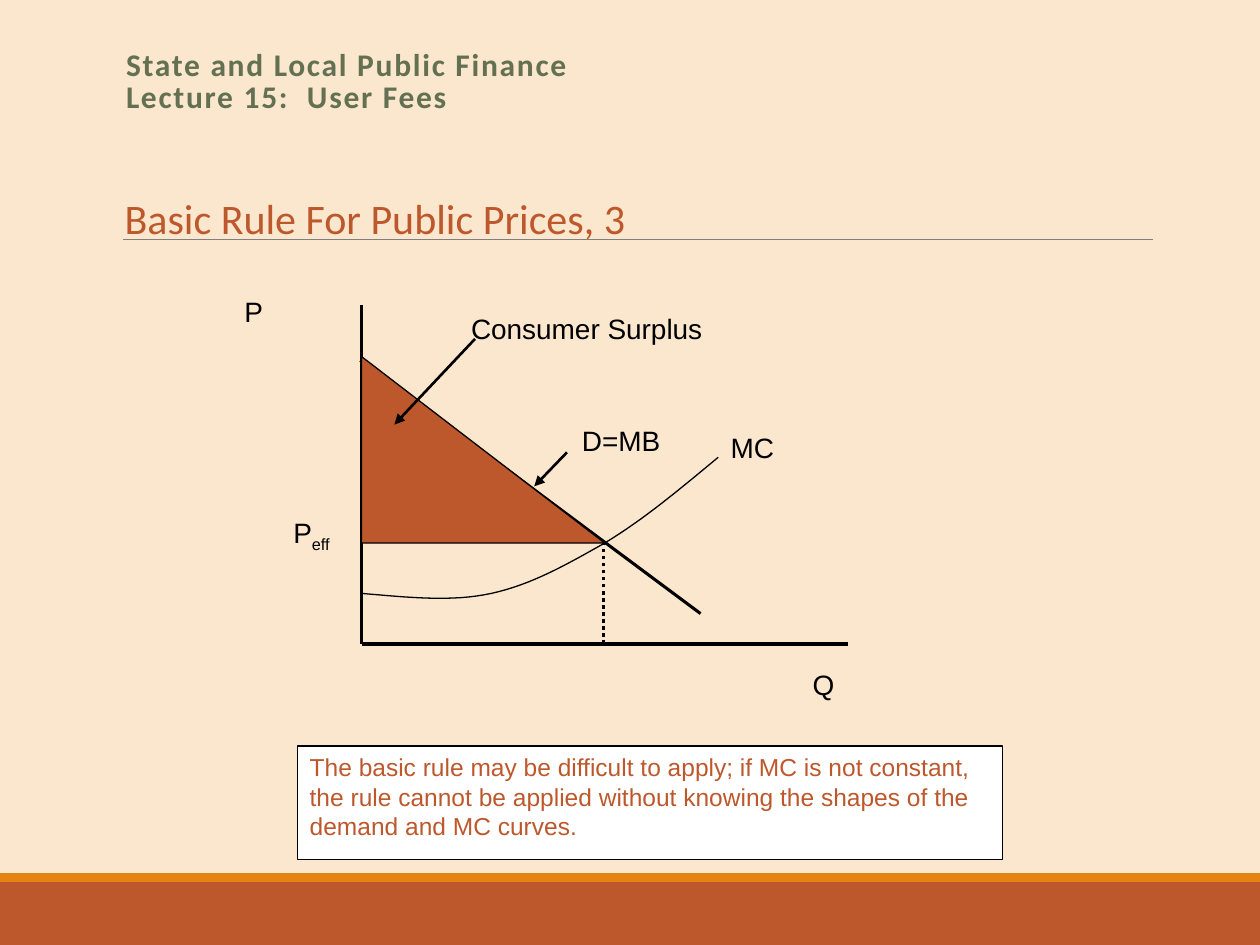
from lxml import etree
from pptx import Presentation
from pptx.dml.color import RGBColor
from pptx.enum.dml import MSO_LINE
from pptx.enum.shapes import MSO_CONNECTOR, MSO_SHAPE
from pptx.enum.text import MSO_ANCHOR, MSO_AUTO_SIZE, PP_ALIGN
from pptx.oxml.ns import qn
from pptx.util import Pt

SCALE = 9144  # EMU per px, 100 px to the inch
TITLE_ONLY = 5

CREAM = RGBColor(0xFB, 0xE6, 0xCE)
RUST = RGBColor(0xBD, 0x58, 0x2C)
ORANGE = RGBColor(0xE4, 0x83, 0x12)
GREEN = RGBColor(0x63, 0x70, 0x52)
GRAY = RGBColor(0x80, 0x80, 0x80)
BLACK = RGBColor(0, 0, 0)
WHITE = RGBColor(0xFF, 0xFF, 0xFF)

RECTANGLE = MSO_SHAPE.RECTANGLE
RIGHT_TRIANGLE = MSO_SHAPE.RIGHT_TRIANGLE
STRAIGHT = MSO_CONNECTOR.STRAIGHT
DOTTED = MSO_LINE.ROUND_DOT
TOP, MIDDLE = MSO_ANCHOR.TOP, MSO_ANCHOR.MIDDLE
LEFT = PP_ALIGN.LEFT
GROW = MSO_AUTO_SIZE.SHAPE_TO_FIT_TEXT
FIXED = MSO_AUTO_SIZE.NONE

# Marginal cost: start point, then two controls and an end per segment
MC_START = (287, 471)
MC_SEGMENTS = [
    ((323, 474), (358, 478), (390, 471)),
    ((422, 464), (450, 448), (480, 431)),
    ((510, 413), (540, 388), (570, 363)),
]
CURVE_STEPS = 16


def px(*lengths):
    return [round(length * SCALE) for length in lengths]


def write_text(shape, text, size=16, font="Arial", color=BLACK, bold=False,
               spacing=0, line_spacing=None, subscript="", anchor=TOP,
               wrap=True, auto_size=FIXED):
    frame = shape.text_frame
    frame.word_wrap, frame.auto_size = wrap, auto_size
    frame.vertical_anchor = anchor
    paragraph = frame.paragraphs[0]
    paragraph.alignment = LEFT
    if line_spacing:
        paragraph.line_spacing = line_spacing
    for index, line in enumerate(text.split("\n")):
        if index:
            paragraph.add_line_break()
        paragraph.add_run().text = line
    if subscript:
        run = paragraph.add_run()
        run.text = subscript
        run.font._element.set("baseline", "-25000")
    for run in paragraph.runs:
        run.font.size, run.font.name = Pt(size), font
        run.font.bold, run.font.color.rgb = bold, color
        if spacing:
            run.font._element.set("spc", str(spacing * 100))


def add_label(slide, box, text, **text_format):
    label = slide.shapes.add_textbox(*px(*box))
    write_text(label, text, **text_format)


def add_block(slide, kind, box, fill, outline=None):
    shape = slide.shapes.add_shape(kind, *px(*box))
    shape.shadow.inherit = False
    shape.fill.solid()
    shape.fill.fore_color.rgb = fill
    if outline is None:
        shape.line.fill.background()
    else:
        shape.line.color.rgb = outline
        shape.line.width = Pt(0.75)
    return shape


def add_line(slide, start, end, width, color=BLACK, dash=None, arrow=False):
    connector = slide.shapes.add_connector(STRAIGHT, *px(*start, *end))
    connector.line.color.rgb = color
    connector.line.width = Pt(width)
    if dash:
        connector.line.dash_style = dash
    if arrow:
        tail = etree.SubElement(connector.line._get_or_add_ln(), qn("a:tailEnd"))
        tail.set("type", "triangle")
    etree.SubElement(connector._element.spPr, qn("a:effectLst"))


def bezier_points(start, segments):
    """Sample joined cubic curves, leaving out the start point."""
    points = []
    for control_1, control_2, end in segments:
        for step in range(1, CURVE_STEPS + 1):
            t = step / CURVE_STEPS
            u = 1 - t
            points.append(tuple(
                u**3 * a + 3 * u * u * t * b + 3 * u * t * t * c + t**3 * d
                for a, b, c, d in zip(start, control_1, control_2, end)))
        start = end
    return points


def add_curve(slide, start, segments):
    builder = slide.shapes.build_freeform(*px(*start))
    builder.add_line_segments(
        [px(*point) for point in bezier_points(start, segments)], close=False)
    curve = builder.convert_to_shape()
    curve.shadow.inherit = False
    curve.fill.background()
    curve.line.color.rgb = BLACK
    curve.line.width = Pt(0.75)


def add_frame(slide):
    # Background, footer bands and rule
    slide.background.fill.solid()
    slide.background.fill.fore_color.rgb = CREAM
    add_block(slide, RECTANGLE, (0, 700, 1000, 50), RUST)
    add_block(slide, RECTANGLE, (0, 693, 1000, 7), ORANGE)
    add_line(slide, (98, 190), (915, 190), 0.5, GRAY)

    # Lecture title and slide heading
    title = slide.shapes.title
    title.left, title.top, title.width, title.height = px(90, 33, 825, 65)
    write_text(title, "State and Local Public Finance\nLecture 15:  User Fees",
               size=18, font="Calibri", color=GREEN, bold=True, spacing=1,
               line_spacing=0.85, anchor=MIDDLE)
    add_label(slide, (89, 148, 421, 50), "Basic Rule For Public Prices, 3",
              size=24, font="Calibri", color=RUST, wrap=False, auto_size=GROW)


def add_diagram(slide):
    # Axes and demand curve
    origin = (287, 511)
    add_line(slide, (287, 242), origin, 2)
    add_line(slide, origin, (673, 511), 2)
    add_line(slide, (286, 286), (556, 487), 1.75)

    # Axis and curve labels
    add_label(slide, (184, 229, 39, 54), "P")
    add_label(slide, (635, 525, 39, 54), "Q")
    add_label(slide, (570, 337, 146, 40), "MC")
    add_label(slide, (452, 331, 129, 40), "D=MB")
    add_label(slide, (223, 404, 116, 81), "P", subscript="eff")

    # Efficient quantity, consumer surplus and pointers
    add_line(slide, (479, 511), (479, 431), 2, dash=DOTTED)
    add_line(slide, (450, 359), (424, 386), 1.5, arrow=True)
    add_block(slide, RIGHT_TRIANGLE, (287, 283, 193, 148), RUST, BLACK)
    add_label(slide, (364, 242, 219, 40), "Consumer Surplus")
    add_line(slide, (377, 269), (313, 337), 1.5, arrow=True)

    # Marginal cost curve
    add_curve(slide, MC_START, MC_SEGMENTS)


def add_note_box(slide):
    box = add_block(slide, RECTANGLE, (236, 592, 560, 90), WHITE, BLACK)
    write_text(box, "The basic rule may be difficult to apply; if MC is not "
               "constant, the rule cannot be applied without knowing the "
               "shapes of the demand and MC curves.", size=14, color=RUST)


def main():
    presentation = Presentation()
    presentation.slide_width, presentation.slide_height = px(1000, 750)
    slide = presentation.slides.add_slide(presentation.slide_layouts[TITLE_ONLY])
    add_frame(slide)
    add_diagram(slide)
    add_note_box(slide)
    presentation.save("out.pptx")


if __name__ == "__main__":
    main()
